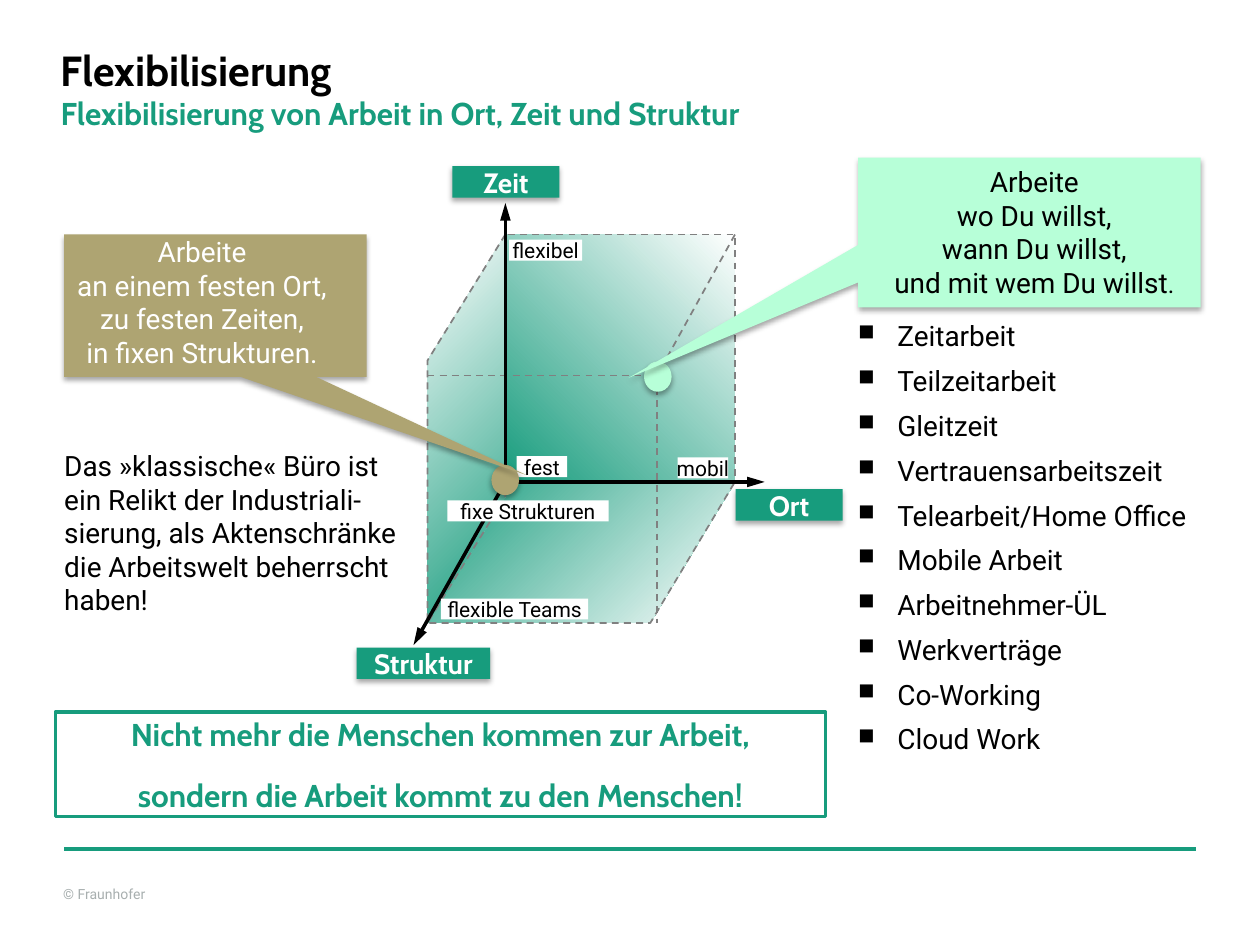
import copy
import pptx
import pptx.util
import pptx.dml.color
import pptx.enum.dml
import pptx.enum.shapes
import pptx.enum.text
import pptx.oxml
import pptx.oxml.ns

Pt = pptx.util.Pt
KIND = pptx.enum.shapes.MSO_SHAPE
ALIGN = pptx.enum.text.PP_ALIGN
MID = pptx.enum.text.MSO_ANCHOR.MIDDLE
DASH = pptx.enum.dml.MSO_LINE.DASH
NS = pptx.oxml.ns.nsdecls("a")
GREEN, MINT, SAND, GREY = "179C7D", "B7FFD8", "AEA472", "808080"
BLACK, WHITE = "000000", "FFFFFF"
HEAD = {"name": "Cabin", "bold": True}
BODY = {"name": "Roboto", "size": Pt(16), "color": BLACK}
SMALL = {**BODY, "size": Pt(12)}


def tint(part, code):
    """Give a colour format the hex colour."""
    part.rgb = pptx.dml.color.RGBColor.from_string(code)


def style(item, values):
    """Set attributes from a dict, with colours as hex."""
    for name, value in values.items():
        if name == "color":
            tint(item.color, value)
        else:
            setattr(item, name, value)


def write(shape, paras, form=None, frame=None, bullet=None):
    """Fill a shape with paragraphs, each a list of (text, font) runs."""
    body = shape.text_frame
    margins = {f"margin_{side}": 0 for side in ("left", "top", "right", "bottom")}
    style(body, {**margins, "word_wrap": True, **(frame or {})})
    for n, runs in enumerate(paras):
        para = body.add_paragraph() if n else body.paragraphs[0]
        style(para, {"alignment": ALIGN.LEFT, **(form or {})})
        if n == 0:
            para.space_before = Pt(0)
        if bullet:
            props = para._p.get_or_add_pPr()
            props.set("marL", str(Pt(22.5)))
            props.set("indent", str(Pt(-22.5)))
            props.append(pptx.oxml.parse_xml(f'<a:buSzPct {NS} val="80000"/>'))
            props.append(pptx.oxml.parse_xml(f'<a:buChar {NS} char="{bullet}"/>'))
        for text, font in runs:
            for i, part in enumerate(text.split("\v")):
                if i:
                    para.add_line_break()
                run = para.add_run()
                run.text = part
                style(run.font, font)
        for gap in para._p.findall(pptx.oxml.ns.qn("a:br")):
            gap.append(copy.deepcopy(para.runs[0]._r.rPr))


def note(slide, box, paras, **kw):
    """Add a text box."""
    shape = slide.shapes.add_textbox(*map(Pt, box))
    write(shape, paras, **kw)
    return shape


def block(slide, kind, box, fill, line=None, shade=False, adj=()):
    """Add a shape with a plain fill, or a gradient given as (start, end, angle)."""
    shape = slide.shapes.add_shape(kind, *map(Pt, box))
    shape.shadow.inherit = False
    for n, value in enumerate(adj):
        shape.adjustments[n] = value
    if isinstance(fill, tuple):
        shape.fill.gradient()
        shape.fill.gradient_angle = fill[2]
        for stop, code in zip(shape.fill.gradient_stops, fill):
            tint(stop.color, code)
    else:
        shape.fill.solid()
        tint(shape.fill.fore_color, fill)
    if line:
        style(shape.line, line)
    else:
        shape.line.fill.background()
    if shade:
        shape._element.spPr.find(pptx.oxml.ns.qn("a:effectLst")).append(pptx.oxml.parse_xml(
            f'<a:outerShdw {NS} blurRad="{Pt(3.1)}" dist="{Pt(1.8)}" dir="5400000">'
            '<a:srgbClr val="000000"><a:alpha val="35000"/></a:srgbClr></a:outerShdw>'))
    return shape


def stroke(slide, ends, form, arrow=False):
    """Add a straight line, with an arrowhead at its end if wanted."""
    link = slide.shapes.add_connector(pptx.enum.shapes.MSO_CONNECTOR.STRAIGHT, *map(Pt, ends))
    style(link.line, form)
    if arrow:
        link.line._get_or_add_ln().append(
            pptx.oxml.parse_xml(f'<a:tailEnd {NS} type="triangle" w="med" len="lg"/>'))
    link._element.spPr.append(pptx.oxml.parse_xml(f"<a:effectLst {NS}/>"))


def label(slide, box, text, font, fill, shade=False):
    """Add a filled label with one centred line."""
    shape = block(slide, KIND.RECTANGLE, box, fill, shade=shade)
    write(shape, [[(text, font)]], {"alignment": ALIGN.CENTER},
          {"word_wrap": False, "vertical_anchor": MID})


def cube(slide, x, y, w, h):
    """Draw the cube with its faces, hidden edges, axes and labels."""
    dx, dy = 44.5, 80.6
    edge = {"color": GREY, "width": Pt(1), "dash_style": DASH}
    axis = {"color": BLACK, "width": Pt(2)}
    block(slide, KIND.RECTANGLE, (x + dx, y, w - dx, h - dy), (GREEN, WHITE, 45), edge)
    block(slide, KIND.PARALLELOGRAM, (x, y + h - dy, w, dy), (GREEN, WHITE, 315), edge, adj=[0.6])
    side = block(slide, KIND.PARALLELOGRAM, (x + (dx - h) / 2, y + (h - dx) / 2, h, dx),
                 (WHITE, GREEN, 315), edge, adj=[1.62])
    side.rotation = 270
    side._element.spPr.xfrm.set("flipH", "1")
    for a, b, c, d in ((0, dy, w - dx, dy), (w - dx, dy, w - dx, h), (w, 0, w - dx, dy)):
        stroke(slide, (x + a, y + b, x + c, y + d), edge)
    for a, b in ((dx, -18), (w + 17, h - dy), (-8, h + 12.6)):
        stroke(slide, (x + dx, y + h - dy, x + a, y + b), axis, True)
    big = {**HEAD, "size": Pt(16), "color": WHITE}
    for a, b, wide, text in ((-40.5, 236, 76.3, "Struktur"), (176, 145.5, 61.2, "Ort"),
                             (14.2, -39, 61.2, "Zeit")):
        label(slide, (x + a, y + b, wide, 18), text, big, GREEN, True)
    for a, b, wide, text in ((7.7, 208, 84.2, "flexible Teams"), (143, 127.4, 28.8, "mobil"),
                             (51, 126.7, 28.8, "fest"), (46.6, 2.9, 41.8, "flexibel"),
                             (11.3, 152, 92.2, "fixe Strukturen")):
        label(slide, (x + a, y + b, wide, 12), text, SMALL, WHITE)


def callout(slide, box, adj, fill, dot, area, runs):
    """Draw a marker dot and the callout that points to it, with its text."""
    x, y = box[:2]
    block(slide, KIND.OVAL, (*dot, 15.8, 17.3), fill, shade=True)
    block(slide, KIND.RECTANGULAR_CALLOUT, box, fill, shade=True, adj=adj)
    left, top, wide, high = area
    note(slide, (x + left, y + top, wide, high), [runs], form={"alignment": ALIGN.CENTER},
         frame={"vertical_anchor": MID})


def title(slide, box):
    """Write the title and its subtitle."""
    note(slide, box, [[("Flexibilisierung\v", {**HEAD, "size": Pt(24), "color": BLACK}),
                       ("Flexibilisierung von Arbeit in Ort, Zeit und Struktur",
                        {**HEAD, "size": Pt(18), "color": GREEN})]])


def forms(slide, box):
    """List the flexible forms of work."""
    names = ("Zeitarbeit", "Teilzeitarbeit", "Gleitzeit", "Vertrauensarbeitszeit",
             "Telearbeit/Home Office", "Mobile Arbeit", "Arbeitnehmer-ÜL", "Werkverträge",
             "Co-Working", "Cloud Work")
    note(slide, box, [[(name, BODY)] for name in names], form={"space_after": Pt(6.4)}, bullet="■")


def motto(slide, box):
    """Draw the framed closing statement."""
    shape = block(slide, KIND.RECTANGLE, box, WHITE, {"color": GREEN, "width": Pt(2)})
    font = {**HEAD, "size": Pt(18), "color": GREEN}
    write(shape, [[("Nicht mehr die Menschen kommen zur Arbeit,", font)],
                  [("sondern die Arbeit kommt zu den Menschen!", font)]],
          {"alignment": ALIGN.CENTER, "space_before": Pt(13.2)}, {"vertical_anchor": MID})


def footer(slide, x, y, w):
    """Draw the closing rule and the copyright line."""
    stroke(slide, (x, y, x + w, y), {"color": GREEN, "width": Pt(2.5)})
    note(slide, (x - 0.7, y + 21, 70.6, 9.4),
         [[("© Fraunhofer", {**BODY, "size": Pt(8), "color": "A8AFAF"})]],
         frame={"word_wrap": False})


def main():
    """Build the slide and save it."""
    deck = pptx.Presentation()
    style(deck, {"slide_width": Pt(720), "slide_height": Pt(540)})
    slide = deck.slides.add_slide(deck.slide_layouts[6])
    footer(slide, 36.7, 485.3, 646.6)
    cube(slide, 244.3, 134, 175.7, 222)
    note(slide, (36.7, 256.3, 195.8, 115.2), [[(
        "Das »klassische« Büro ist\vein Relikt der Industriali-sierung, als Aktenschränke\v"
        "die Arbeitswelt beherrscht haben!", BODY)]])
    callout(slide, (490.3, 90, 195.8, 85.7), (-1.17, 0.97), MINT, (368, 206.6),
            (14.8, 9.4, 172, 66.2),
            [("Arbeite\vwo Du willst,\vwann Du willst,\vund mit wem Du willst", BODY),
             (".", {**BODY, "size": Pt(14)})])
    callout(slide, (36.7, 134, 172.8, 81.4), (1.03, 1.19), SAND, (280.8, 265.7),
            (2.8, 9.3, 152, 58.3),
            [("Arbeite\van einem festen Ort,\vzu festen Zeiten,\vin fixen Strukturen.",
              {**BODY, "color": WHITE})])
    title(slide, (34.6, 25.2, 647.3, 33.8))
    forms(slide, (490.3, 182.2, 215.3, 193.7))
    motto(slide, (31.7, 406.8, 440, 59.8))
    deck.save("out.pptx")


if __name__ == "__main__":
    main()
